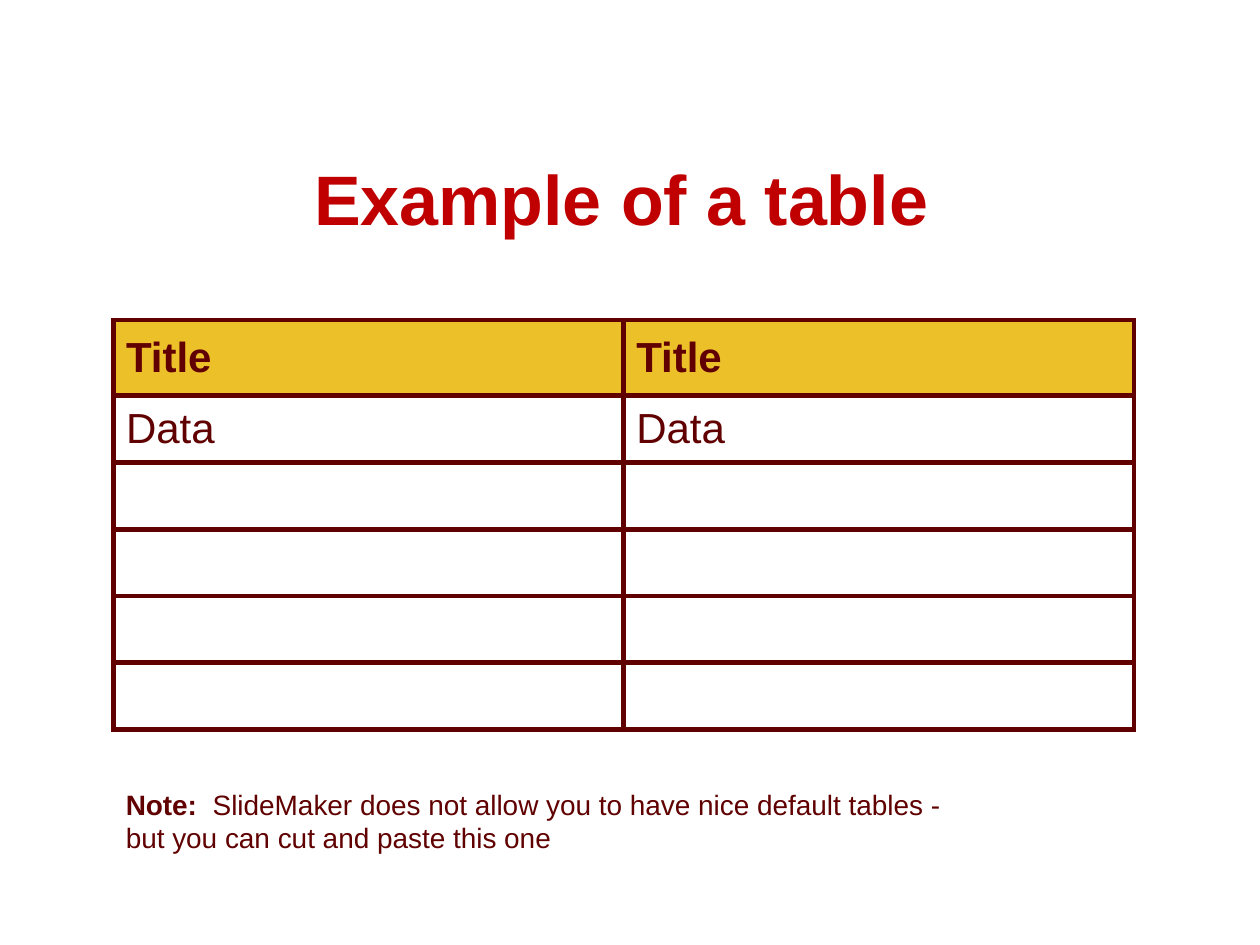
from pptx import Presentation
from pptx.dml.color import RGBColor as RGB
from pptx.enum.text import MSO_ANCHOR as Anchor, PP_ALIGN as Align
from pptx.oxml import parse_xml
from pptx.oxml.ns import nsdecls
from pptx.util import Inches, Pt

HUE = {"title": "C00000", "ink": "600000", "head": "ECC029"}


def style(font, hue, **look):
    font.color.rgb = RGB.from_string(HUE[hue])
    for key, val in {"name": "Arial", **look}.items():
        setattr(font, key, val)


deck = Presentation()
deck.slide_width, deck.slide_height = Inches(10), Inches(7.5)
slide = deck.slides.add_slide(deck.slide_layouts[5])

# Title
title = slide.shapes.title
title.left, title.top, title.width, title.height = map(Inches, (0.43, 0.94, 9, 1.25))
title.text_frame.vertical_anchor = Anchor.MIDDLE
para = title.text_frame.paragraphs[0]
para.alignment = Align.CENTER
para.text = "Example of a table"
style(para.runs[0].font, "title", size=Pt(40), bold=True)

# Table: a header row and five equal rows
left, wide = Inches(0.9), Inches(8.1)
rows = [["Title"] * 2, ["Data"] * 2] + [[""] * 2] * 4
table = slide.shapes.add_table(len(rows), 2, left, Inches(2.54), wide, Inches(3.25)).table
table.horz_banding = False
for r, texts in enumerate(rows):
    head = r == 0
    table.rows[r].height = Inches(0.6 if head else 0.53)
    for c, text in enumerate(texts):
        cell = table.cell(r, c)
        cell.vertical_anchor = Anchor.MIDDLE
        if head:
            cell.fill.solid()
            cell.fill.fore_color.rgb = RGB.from_string(HUE["head"])
        else:
            cell.fill.background()
        if text:
            cell.text = text
            run = cell.text_frame.paragraphs[0].runs[0]
            style(run.font, "ink", size=Pt(24), bold=head)
        # Cell borders
        props = cell._tc.get_or_add_tcPr()
        for i, side in enumerate("LRTB"):
            props.insert(i, parse_xml(
                f'<a:ln{side} {nsdecls("a")} w="{Pt(3)}"><a:solidFill>'
                f'<a:srgbClr val="{HUE["ink"]}"/></a:solidFill></a:ln{side}>'))

# Note, with a tab stop after its label
note = slide.shapes.add_textbox(left, Inches(6.2), Inches(6.93), Inches(0.64))
note.text_frame.word_wrap = True
para = note.text_frame.paragraphs[0]
para._p.get_or_add_pPr().append(parse_xml(
    f'<a:tabLst {nsdecls("a")}><a:tab pos="{Inches(0.69)}" algn="l"/></a:tabLst>'))
parts = [
    ("Note:\t", True),
    ("SlideMaker does not allow you to have nice default tables - "
     "but you can cut and paste this one", False),
]
for text, bold in parts:
    run = para.add_run()
    run.text = text
    style(run.font, "ink", size=Pt(16), bold=bold)

deck.save("out.pptx")
